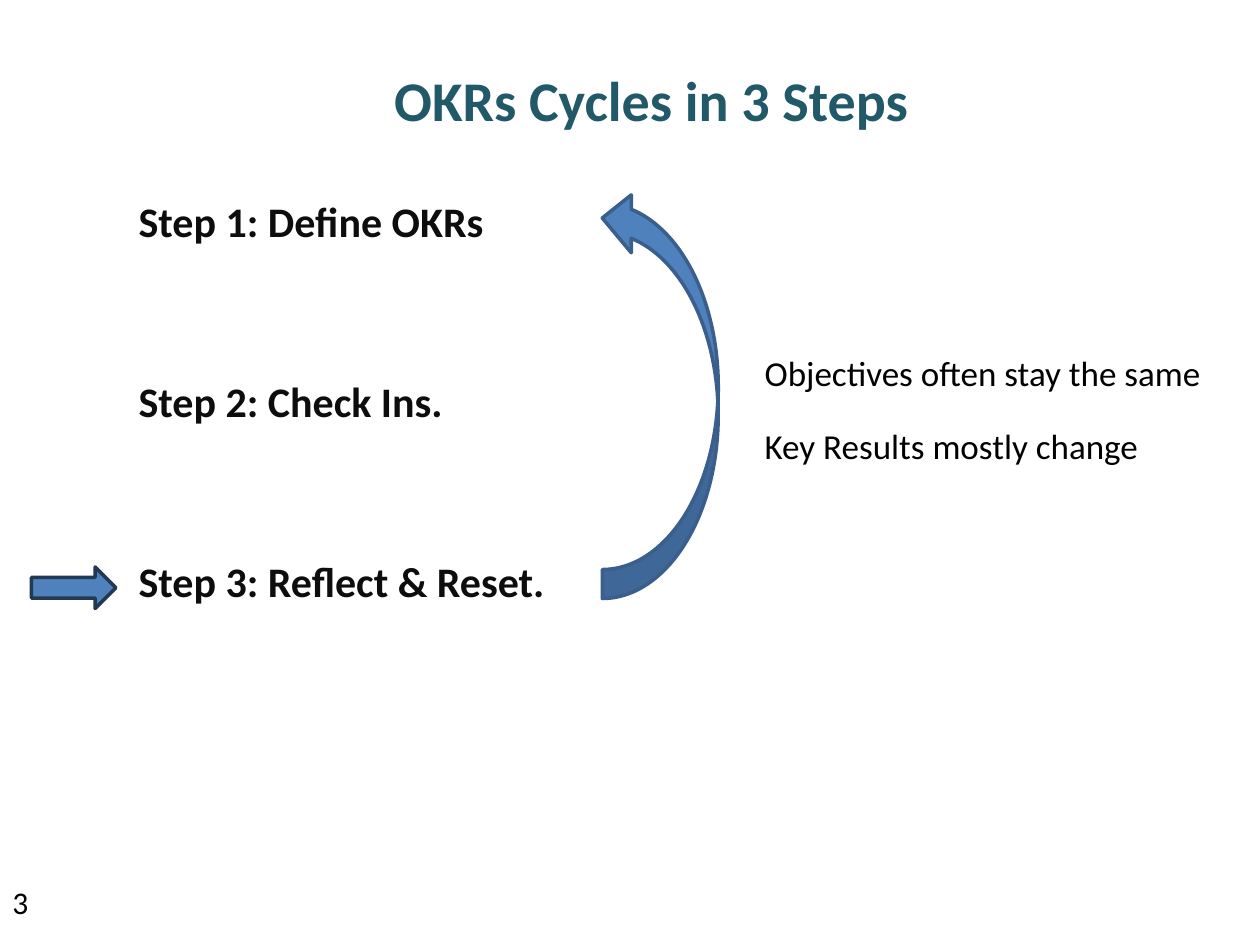
from pptx import Presentation, util as u
from pptx.dml.color import RGBColor
from pptx.enum import shapes, text
from pptx.oxml.xmlchemy import OxmlElement

COLORS = {
    "title": "215968",
    "step": "0D0D0D",
    "note": "000000",
    "arrow": "4F81BD",
    "cycle_edge": "3A5F8C",
    "marker_edge": "233953",
}


def color(name):
    return RGBColor.from_string(COLORS[name])


def place(item, area):
    item.left, item.top, item.width, item.height = map(u.Inches, area)


def write(box, lines, size, ink, bold=False, before=0, after=0,
          align=text.PP_ALIGN.LEFT, fit=text.MSO_AUTO_SIZE.NONE):
    frame = box.text_frame
    frame.word_wrap = True
    frame.auto_size = fit
    frame.vertical_anchor = text.MSO_ANCHOR.TOP
    for index, line in enumerate(lines):
        para = frame.add_paragraph() if index else frame.paragraphs[0]
        para.alignment = align
        para.space_before = u.Pt(before if index else 0)
        para.space_after = u.Pt(after)
        span = para.add_run()
        span.text = line
        span.font.name = "Calibri"
        span.font.size = u.Pt(size)
        span.font.bold = bold
        span.font.color.rgb = color(ink)


def add_title(page, area):
    box = page.shapes.title
    place(box, area)
    write(box, ["OKRs Cycles in 3 Steps"], 32, "title", bold=True,
          align=text.PP_ALIGN.CENTER)


def add_steps(page, area):
    box = page.placeholders[1]
    place(box, area)
    steps = ["Define OKRs", "Check Ins.", "Reflect & Reset."]
    lines = [f"Step {number}: {step}" for number, step in enumerate(steps, 1)]
    write(box, lines, 24, "step", bold=True, before=4, after=70)
    for para in box.text_frame.paragraphs:
        properties = para._p.get_or_add_pPr()
        properties.set("marL", "0")
        properties.set("indent", "0")
        properties.append(OxmlElement("a:buNone"))


def add_arrow(page, kind, area, edge, rotation=0):
    arrow = page.shapes.add_shape(kind, *map(u.Inches, area))
    arrow.rotation = rotation
    arrow.shadow.inherit = False
    arrow.fill.solid()
    arrow.fill.fore_color.rgb = color("arrow")
    arrow.line.color.rgb = color(edge)
    arrow.line.width = u.Pt(2)


def add_notes_text(page, area):
    box = page.shapes.add_textbox(*map(u.Inches, area))
    write(box, ["Objectives often stay the same", "Key Results mostly change"],
          20, "note", after=18, fit=text.MSO_AUTO_SIZE.SHAPE_TO_FIT_TEXT)


def add_page_number(page, area):
    box = page.shapes.add_textbox(*map(u.Inches, area))
    write(box, ["3"], 18, "note")


def main():
    deck = Presentation()
    deck.slide_width, deck.slide_height = u.Inches(10), u.Inches(7.5)
    page = deck.slides.add_slide(deck.slide_layouts[1])
    arrows = shapes.MSO_SHAPE
    add_title(page, (0.67, 0.47, 9, 1.25))
    add_steps(page, (1, 1.5, 9, 4.95))
    add_arrow(page, arrows.CURVED_RIGHT_ARROW, (4.78, 1.5, 0.92, 3.25),
              "cycle_edge", rotation=180)
    add_notes_text(page, (5.97, 2.74, 4.03, 1.36))
    add_page_number(page, (0, 6.96, 0.92, 0.4))
    add_arrow(page, arrows.RIGHT_ARROW, (0.25, 4.5, 0.67, 0.33), "marker_edge")
    deck.save("out.pptx")


if __name__ == "__main__":
    main()
